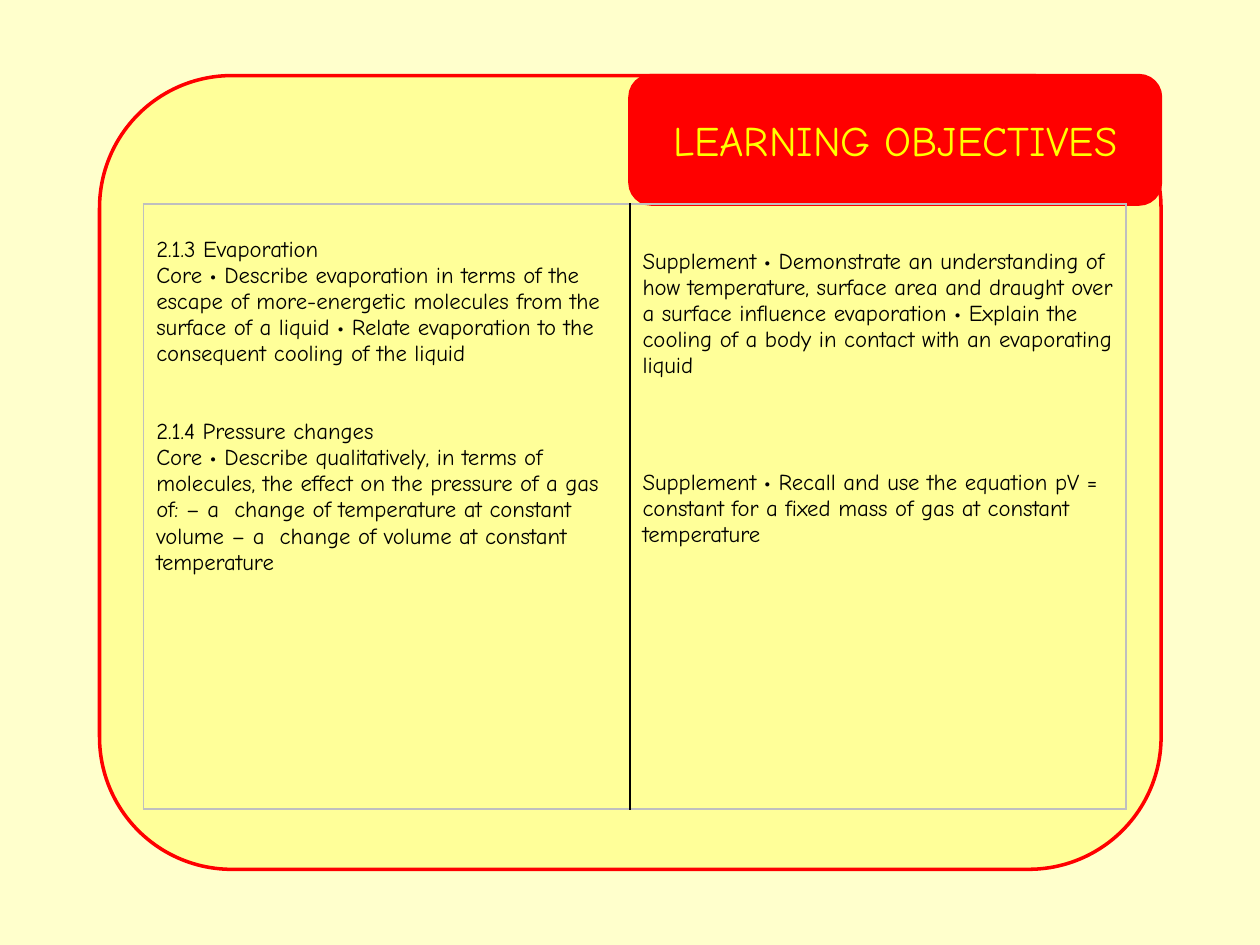
from lxml.etree import SubElement
from pptx import Presentation
from pptx.dml.color import RGBColor
from pptx.enum.shapes import MSO_SHAPE as Shape
from pptx.enum.text import MSO_ANCHOR as Anchor, PP_ALIGN as Align
from pptx.oxml.ns import qn
from pptx.util import Pt

FONT = "Comic Neue"
RED, YELLOW, PALE, CREAM = "FF0000", "FFFF00", "FFFF99", "FFFFCC"
BLACK, GREY = "000000", "BFBFBF"

EVAPORATION_AND_PRESSURE = [
    ("2.1.3 Evaporation", 0),
    ("Core • Describe evaporation in terms of the escape of more-energetic "
     "molecules from the surface of a liquid • Relate evaporation to the "
     "consequent cooling of the liquid", 0),
    ("2.1.4 Pressure changes", 30),
    ("Core • Describe qualitatively, in terms of molecules, the effect on the "
     "pressure of a gas of: – a  change of temperature at constant volume "
     "– a  change of volume at constant temperature", 0),
]
SUPPLEMENTS = [
    ("Supplement • Demonstrate an understanding of how temperature, surface "
     "area and draught over a surface influence evaporation • Explain the "
     "cooling of a body in contact with an evaporating liquid", 0),
    ("Supplement • Recall and use the equation pV = constant for a fixed mass "
     "of gas at constant temperature", 52),
]


def paint(color_format, color):
    color_format.rgb = RGBColor.from_string(color)


def place(shape, box):
    shape.left, shape.top, shape.width, shape.height = map(Pt, box)


def add_panel(slide, kind, box, fill, line=None):
    shape = slide.shapes.add_shape(kind, *map(Pt, box))
    shape.shadow.inherit = False
    shape.fill.solid()
    paint(shape.fill.fore_color, fill)
    if line:
        paint(shape.line.color, line)
        shape.line.width = Pt(2)
    else:
        shape.line.fill.background()


def format_paragraph(paragraph, size, color):
    for run in paragraph.runs:
        run.font.name = FONT
        run.font.size = Pt(size)
        paint(run.font.color, color)


def set_title(slide, box, text):
    title = slide.shapes.title
    place(title, box)
    title.text_frame.text = text
    title.text_frame.vertical_anchor = Anchor.MIDDLE
    paragraph = title.text_frame.paragraphs[0]
    paragraph.alignment = Align.CENTER
    format_paragraph(paragraph, 24, YELLOW)
    slide.shapes._spTree.append(title._element)


def set_borders(cell, colors):
    properties = cell._tc.get_or_add_tcPr()
    for position, (side, color) in enumerate(zip("LRTB", colors)):
        line = properties.makeelement(qn(f"a:ln{side}"), {"w": str(Pt(1))})
        fill = SubElement(line, qn("a:solidFill"))
        SubElement(fill, qn("a:srgbClr"), val=color)
        properties.insert(position, line)


def fill_cell(cell, entries, margin_top, borders):
    cell.fill.background()
    cell.margin_top = Pt(margin_top)
    cell.text_frame.text = "\n".join(text for text, gap in entries)
    for paragraph, (text, gap) in zip(cell.text_frame.paragraphs, entries):
        paragraph.space_before = Pt(gap)
        format_paragraph(paragraph, 13, BLACK)
    set_borders(cell, borders)


def add_objectives(slide, left, top, widths, height):
    box = (left, top, sum(widths), height)
    table = slide.shapes.add_table(1, len(widths), *map(Pt, box)).table
    table.first_row = table.horz_banding = False
    for column, width in zip(table.columns, widths):
        column.width = Pt(width)
    fill_cell(table.cell(0, 0), EVAPORATION_AND_PRESSURE, 18.6,
              (GREY, BLACK, GREY, GREY))
    fill_cell(table.cell(0, 1), SUPPLEMENTS, 25.5,
              (BLACK, GREY, GREY, GREY))


def main():
    presentation = Presentation()
    presentation.slide_width, presentation.slide_height = Pt(720), Pt(540)
    slide = presentation.slides.add_slide(presentation.slide_layouts[5])
    slide.background.fill.solid()
    paint(slide.background.fill.fore_color, PALE)

    title_box = (360, 43.2, 303.1, 73.4)
    add_panel(slide, Shape.RECTANGLE, (0, 0, 720, 540), CREAM)
    add_panel(slide, Shape.ROUNDED_RECTANGLE, (56.9, 43.2, 606.6, 453.6), PALE, RED)
    add_panel(slide, Shape.ROUNDED_RECTANGLE, title_box, RED, RED)
    set_title(slide, title_box, "LEARNING OBJECTIVES")
    add_objectives(slide, 82.1, 116.7, (277.9, 283.5), 345.6)
    presentation.save("out.pptx")


if __name__ == "__main__":
    main()
